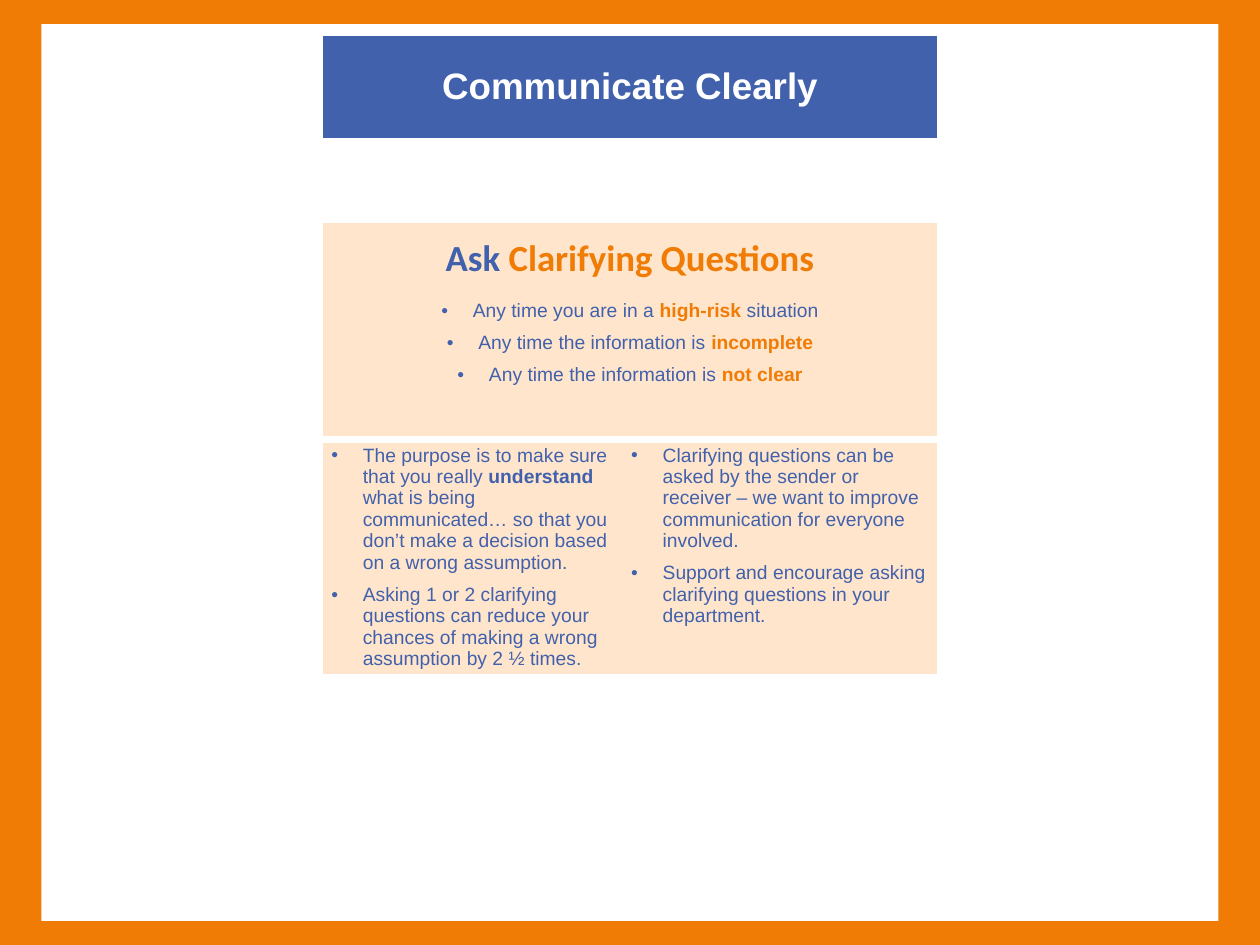
from dataclasses import dataclass

from lxml.etree import SubElement
from pptx import Presentation
from pptx.dml.color import RGBColor
from pptx.enum.shapes import MSO_SHAPE
from pptx.enum.text import MSO_ANCHOR, PP_ALIGN
from pptx.oxml import parse_xml
from pptx.oxml.ns import nsdecls, qn
from pptx.util import Inches, Pt


@dataclass(frozen=True)
class Theme:
    blue: str = "4261AD"
    orange: str = "F07B05"
    peach: str = "FEE5CB"
    white: str = "FFFFFF"
    font: str = "Arial"
    heading_font: str = "Calibri"
    heading_size: int = 21
    body_size: int = 11
    rule_width: float = 4.5


THEME = Theme()
SLIDE_WIDTH, SLIDE_HEIGHT = 10, 7.5
SIDE_BAR, END_BAR = 0.33, 0.19
TABLE_LEFT, TABLE_TOP = 2.56, 0.26
COLUMNS = [2.38, 2.5]
ROWS = [0.86, 0.62, 1.75, 1.89]
ROW_FILLS = [THEME.blue, THEME.white, THEME.peach, THEME.peach]
MERGED_ROWS = 3

TITLE = [("Communicate Clearly", THEME.white, True)]
HEADING = [("Ask ", THEME.blue, True), ("Clarifying Questions", THEME.orange, True)]


def plain(text):
    return text, THEME.blue, False


def strong(text, color=THEME.orange):
    return text, color, True


WHEN_TO_ASK = [
    [plain("Any time you are in a "), strong("high-risk"), plain(" situation")],
    [plain("Any time the information is "), strong("incomplete")],
    [plain("Any time the information is "), strong("not clear")],
]
PURPOSE = [
    [plain("The purpose is to make sure that you really "),
     strong("understand", THEME.blue),
     plain(" what is being communicated… so that you don’t make a decision "
           "based on a wrong assumption.")],
    [plain("Asking 1 or 2 clarifying questions can reduce your chances of "
           "making a wrong assumption by 2 ½ times.")],
]
WHO_ASKS = [
    [plain("Clarifying questions can be asked by the sender or receiver – "
           "we want to improve communication for everyone involved.")],
    [plain("Support and encourage asking clarifying questions in your department.")],
]


def add_frame(page):
    bars = [
        (0, 0, SIDE_BAR, SLIDE_HEIGHT),
        (SLIDE_WIDTH - SIDE_BAR, 0, SIDE_BAR, SLIDE_HEIGHT),
        (0, 0, SLIDE_WIDTH, END_BAR),
        (0, SLIDE_HEIGHT - END_BAR, SLIDE_WIDTH, END_BAR),
    ]
    for bar in bars:
        box = page.shapes.add_shape(MSO_SHAPE.RECTANGLE, *map(Inches, bar))
        box.shadow.inherit = False
        box.fill.solid()
        box.fill.fore_color.rgb = RGBColor.from_string(THEME.orange)
        box.line.fill.background()


def style_cell(cell, color):
    cell.fill.solid()
    cell.fill.fore_color.rgb = RGBColor.from_string(color)
    cell.margin_left = cell.margin_right = Inches(0.07)
    cell.margin_top = cell.margin_bottom = Inches(0.04)
    rule = f'<a:solidFill><a:srgbClr val="{THEME.white}"/></a:solidFill>'
    edges = [("lnL", "<a:noFill/>"), ("lnR", "<a:noFill/>"), ("lnT", rule), ("lnB", rule)]
    properties = cell._tc.get_or_add_tcPr()
    for position, (edge, paint) in enumerate(edges):
        line = parse_xml(f'<a:{edge} {nsdecls("a")} w="{Pt(THEME.rule_width)}">{paint}</a:{edge}>')
        properties.insert(position, line)


def write_spans(para, spans, size=THEME.body_size, font=THEME.font):
    for text, color, bold in spans:
        span = para.add_run()
        span.text = text
        span.font.size = Pt(size)
        span.font.name = font
        span.font.bold = bold
        span.font.color.rgb = RGBColor.from_string(color)


def write_bullet(para, spans, align):
    properties = para._p.get_or_add_pPr()
    properties.set("marL", str(Inches(0.25)))
    properties.set("indent", str(-Inches(0.25)))
    SubElement(properties, qn("a:buFont"), typeface=THEME.font)
    SubElement(properties, qn("a:buChar"), char="•")
    para.alignment = align
    para.space_after = Pt(6)
    write_spans(para, spans)


def write_list(cell, items):
    frame = cell.text_frame
    for index, spans in enumerate(items):
        para = frame.add_paragraph() if index else frame.paragraphs[0]
        write_bullet(para, spans, PP_ALIGN.LEFT)


def add_content(page):
    table = page.shapes.add_table(
        len(ROWS), len(COLUMNS), Inches(TABLE_LEFT), Inches(TABLE_TOP),
        Inches(sum(COLUMNS)), Inches(sum(ROWS))).table
    table.first_row = table.horz_banding = False
    for column, width in zip(table.columns, COLUMNS):
        column.width = Inches(width)
    for row, height, color in zip(table.rows, ROWS, ROW_FILLS):
        row.height = Inches(height)
        for cell in row.cells:
            style_cell(cell, color)
    for index in range(MERGED_ROWS):
        table.cell(index, 0).merge(table.cell(index, 1))

    title, question = table.cell(0, 0), table.cell(2, 0)
    for cell, spans, font in [(title, TITLE, THEME.font),
                              (question, HEADING, THEME.heading_font)]:
        cell.vertical_anchor = MSO_ANCHOR.MIDDLE
        para = cell.text_frame.paragraphs[0]
        para.alignment = PP_ALIGN.CENTER
        write_spans(para, spans, THEME.heading_size, font)

    question.margin_bottom = Inches(0.33)
    question.text_frame.paragraphs[0].space_after = Pt(11)
    for spans in WHEN_TO_ASK:
        write_bullet(question.text_frame.add_paragraph(), spans, PP_ALIGN.CENTER)
    for column, items in enumerate([PURPOSE, WHO_ASKS]):
        write_list(table.cell(3, column), items)


def main():
    deck = Presentation()
    deck.slide_width, deck.slide_height = Inches(SLIDE_WIDTH), Inches(SLIDE_HEIGHT)
    page = deck.slides.add_slide(deck.slide_layouts[6])
    add_frame(page)
    add_content(page)
    deck.save("out.pptx")


if __name__ == "__main__":
    main()
